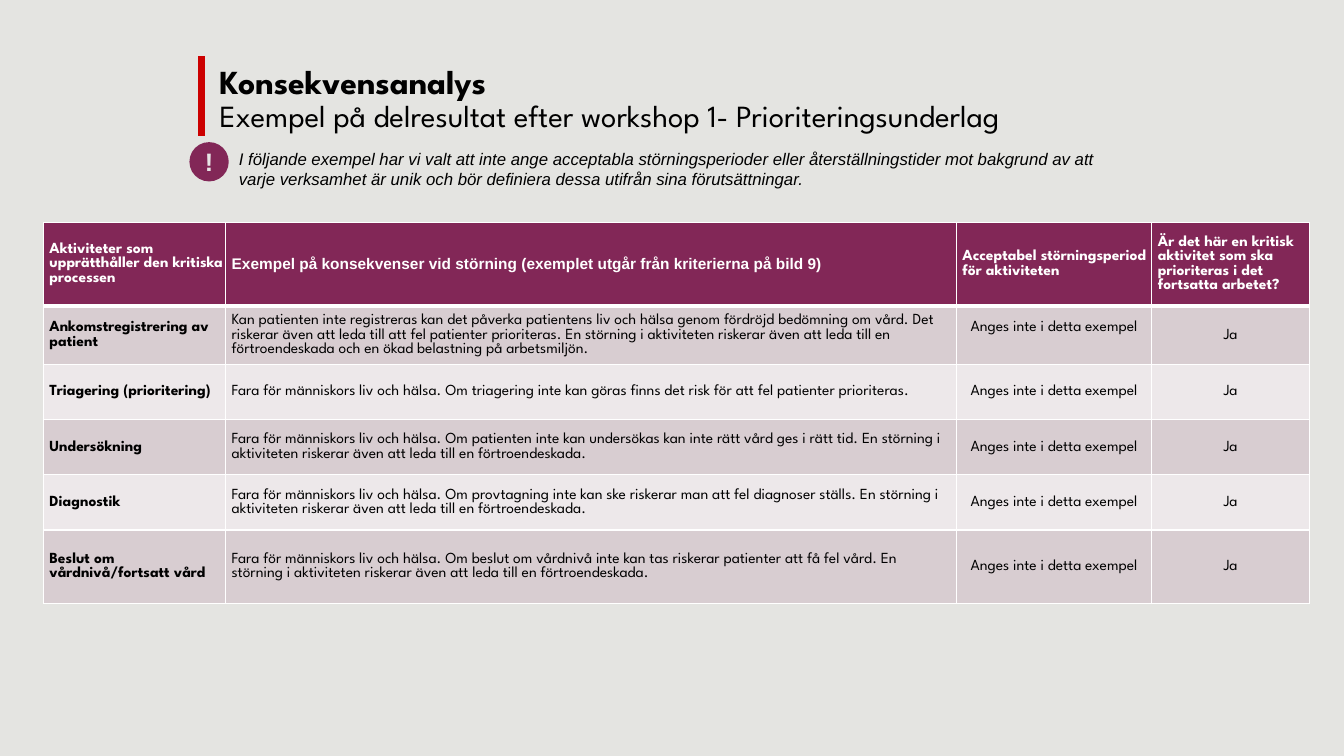
import pptx
import pptx.dml.color
import pptx.enum.shapes
import pptx.enum.text
import pptx.oxml
import pptx.oxml.ns
import pptx.util

Pt = pptx.util.Pt
RGBColor = pptx.dml.color.RGBColor
MIDDLE = pptx.enum.text.MSO_ANCHOR.MIDDLE
CENTER = pptx.enum.text.PP_ALIGN.CENTER

BACKGROUND = RGBColor(0xE4, 0xE4, 0xE1)
PLUM = RGBColor(0x82, 0x27, 0x57)
RED = RGBColor(0xCC, 0x00, 0x00)
BLACK = RGBColor(0x00, 0x00, 0x00)
WHITE = RGBColor(0xFF, 0xFF, 0xFF)
PALE_GREY = RGBColor(0xE7, 0xE6, 0xE6)
BANDS = [RGBColor(0xD8, 0xCD, 0xD1), RGBColor(0xED, 0xE8, 0xEA)]
HEADING_FONT = "League Spartan"
PLAIN_FONT = "Arial"


def add_span(para, text, color, **formats):
    span = para.add_run()
    span.text = text
    span.font.color.rgb = color
    for name, value in formats.items():
        setattr(span.font, name, value)


def set_margins(frame, left, top, right, bottom):
    margins = {"margin_left": left, "margin_top": top,
               "margin_right": right, "margin_bottom": bottom}
    for name, value in margins.items():
        setattr(frame, name, Pt(value))


deck = pptx.Presentation()
deck.slide_width, deck.slide_height = Pt(960), Pt(540)
page = deck.slides.add_slide(deck.slide_layouts[6])
page.background.fill.solid()
page.background.fill.fore_color.rgb = BACKGROUND

# Table content
headers = [
    "Aktiviteter som upprätthåller den kritiska processen",
    "Exempel på konsekvenser vid störning (exemplet utgår från kriterierna på bild 9)",
    "Acceptabel störningsperiod \vför aktiviteten",
    "Är det här en kritisk aktivitet som ska prioriteras i det fortsatta arbetet?",
]
activities = [
    ("Ankomstregistrering av patient",
     "Kan patienten inte registreras kan det påverka patientens liv och hälsa genom "
     "fördröjd bedömning om vård. Det riskerar även att leda till att fel patienter "
     "prioriteras. En störning i aktiviteten riskerar även att leda till en "
     "förtroendeskada och en ökad belastning på arbetsmiljön."),
    ("Triagering (prioritering)",
     "Fara för människors liv och hälsa. Om triagering inte kan göras finns det risk "
     "för att fel patienter prioriteras."),
    ("Undersökning",
     "Fara för människors liv och hälsa. Om patienten inte kan undersökas kan inte rätt "
     "vård ges i rätt tid. En störning i aktiviteten riskerar även att leda till en "
     "förtroendeskada."),
    ("Diagnostik",
     "Fara för människors liv och hälsa. Om provtagning inte kan ske riskerar man att "
     "fel diagnoser ställs. En störning i aktiviteten riskerar även att leda till en "
     "förtroendeskada."),
    ("Beslut om vårdnivå/fortsatt vård",
     "Fara för människors liv och hälsa. Om beslut om vårdnivå inte kan tas riskerar "
     "patienter att få fel vård. En störning i aktiviteten riskerar även att leda till "
     "en förtroendeskada."),
]
rows = [headers] + [[name, effect, "Anges inte i detta exempel", "Ja"]
                    for name, effect in activities]

# Table
widths = [130.2, 522, 139.6, 112.4]
heights = [59.6, 39.4, 39.4, 39.4, 39.4, 52.4]
table = page.shapes.add_table(len(rows), len(widths), Pt(31), Pt(159),
                              Pt(sum(widths)), Pt(sum(heights))).table
for column, width in zip(table.columns, widths):
    column.width = Pt(width)
for row, height in zip(table.rows, heights):
    row.height = Pt(height)

for r, texts in enumerate(rows):
    for c, text in enumerate(texts):
        cell = table.cell(r, c)
        is_header = r == 0
        if is_header:
            set_margins(cell, 4.3, 2.9, 0, 2.9)
        else:
            # The first period sits a little above the middle of its row
            set_margins(cell, 4.3, 5.8, 4.3, 17 if (r, c) == (1, 2) else 5.8)
        cell.vertical_anchor = MIDDLE

        # Borders come before the fill in the cell properties
        properties = cell._tc.get_or_add_tcPr()
        for side in "LRTB":
            thick = (side == "B" and r == 0) or (side == "T" and r == 1)
            properties.append(pptx.oxml.parse_xml(
                f'<a:ln{side} {pptx.oxml.ns.nsdecls("a")} w="{Pt(3 if thick else 1)}">'
                f'<a:solidFill><a:srgbClr val="{WHITE}"/></a:solidFill></a:ln{side}>'))
        cell.fill.solid()
        cell.fill.fore_color.rgb = PLUM if is_header else BANDS[(r - 1) % 2]

        para = cell.text_frame.paragraphs[0]
        if not is_header and c >= 2:
            para.alignment = CENTER
        for i, line in enumerate(text.split("\v")):
            if i:
                para.add_line_break()
            add_span(para, line, WHITE if is_header else BLACK, size=Pt(11),
                     name=PLAIN_FONT if (r, c) == (0, 1) else HEADING_FONT,
                     bold=is_header or c == 0)

# Title
box = page.shapes.add_textbox(Pt(149.8), Pt(42.5), Pt(785.5), Pt(57.6))
box.text_frame.word_wrap = True
box.text_frame.vertical_anchor = MIDDLE
para = box.text_frame.paragraphs[0]
para.line_spacing = 0.9
add_span(para, "Konsekvensanalys ", BLACK, name=HEADING_FONT, size=Pt(24), bold=True)
para.add_line_break()
add_span(para, "Exempel på delresultat efter workshop 1- Prioriteringsunderlag", BLACK,
         name=HEADING_FONT, size=Pt(22), bold=False)

# Red rule beside the title
rule = page.shapes.add_connector(pptx.enum.shapes.MSO_CONNECTOR.STRAIGHT,
                                 Pt(144), Pt(40.2), Pt(144), Pt(97.4))
rule.line.color.rgb = RED
rule.line.width = Pt(5)
rule._element.spPr.append(pptx.oxml.parse_xml(
    f'<a:effectLst {pptx.oxml.ns.nsdecls("a")}/>'))

# Note
box = page.shapes.add_textbox(Pt(163.5), Pt(102.4), Pt(655), Pt(36))
box.text_frame.word_wrap = True
para = box.text_frame.paragraphs[0]
para.space_after = Pt(12)
add_span(para, "I följande exempel har vi valt att inte ange acceptabla störningsperioder "
         "eller återställningstider mot bakgrund av att varje verksamhet är unik och bör "
         "definiera dessa utifrån sina förutsättningar.", BLACK,
         name=PLAIN_FONT, size=Pt(12), italic=True)

# Exclamation badge
badge = page.shapes.add_shape(pptx.enum.shapes.MSO_SHAPE.OVAL,
                              Pt(135.3), Pt(101.5), Pt(28.1), Pt(28.1))
badge.shadow.inherit = False
badge.fill.solid()
badge.fill.fore_color.rgb = PLUM
badge.line.fill.background()
set_margins(badge.text_frame, 0, 0, 0, 0)
badge.text_frame.vertical_anchor = MIDDLE
para = badge.text_frame.paragraphs[0]
para.alignment = CENTER
add_span(para, "!", PALE_GREY, name=PLAIN_FONT, size=Pt(18), bold=True)

deck.save("out.pptx")
